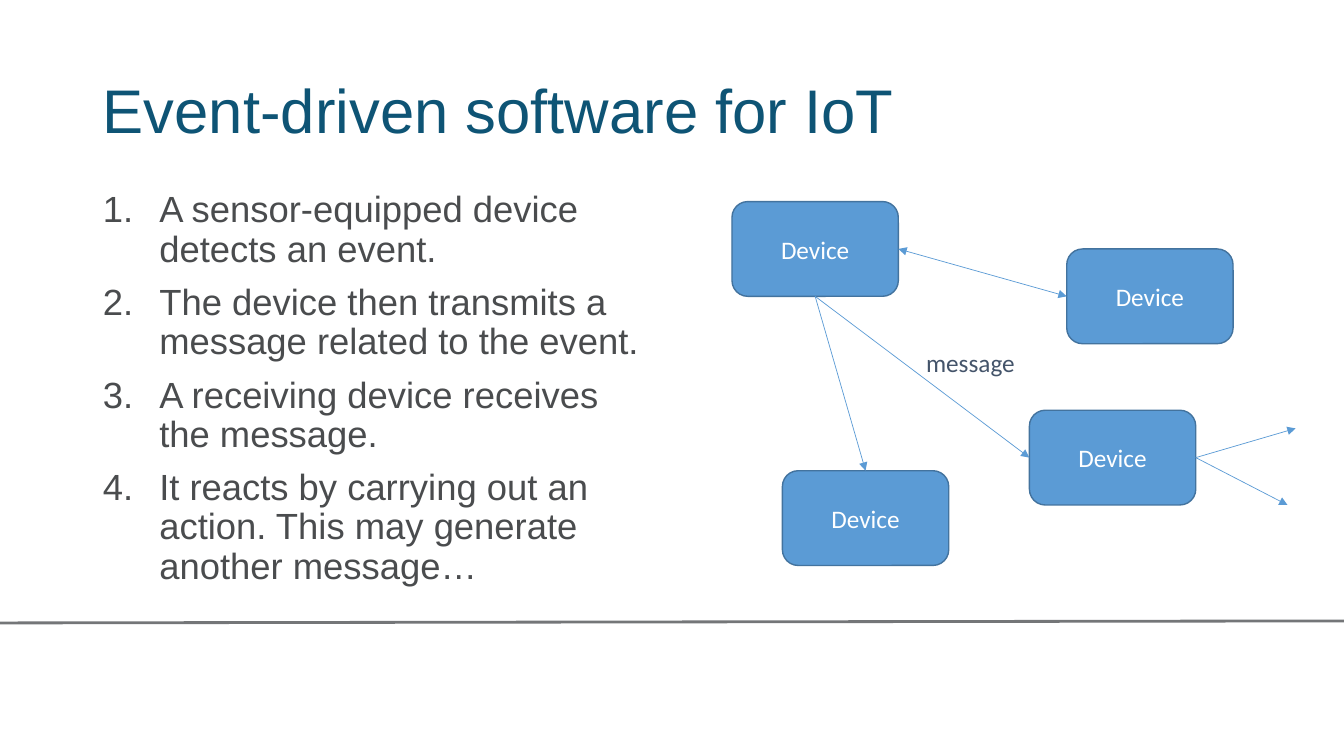
from lxml.etree import SubElement
from pptx import Presentation
from pptx.dml.color import RGBColor
from pptx.enum.shapes import MSO_CONNECTOR, MSO_SHAPE
from pptx.enum.text import MSO_ANCHOR, MSO_AUTO_SIZE, PP_ALIGN
from pptx.oxml.ns import qn
from pptx.util import Inches, Pt

TOP, LEFT, BOTTOM, RIGHT = range(4)


def paint(target, color):
    """Set a solid colour on a fill or a font colour."""
    if hasattr(target, "solid"):
        target.solid()
        target = target.fore_color
    target.rgb = RGBColor.from_string(color)


class Board:
    """Hold the style and the current slide."""

    blue, edge, rule = "5B9BD5", "43739E", "747678"
    head, body, note = "0E5475", "4A4C4E", "44546A"

    def __init__(self, deck):
        """Add a slide with a title and a body."""
        self.slide = deck.slides.add_slide(deck.slide_layouts[1])

    def place(self, shape, *box):
        """Move and size a shape."""
        shape.left, shape.top, shape.width, shape.height = map(Inches, box)

    def add_text(self, para, text, size, color, font, align):
        """Add one run of text to a paragraph."""
        para.alignment = align
        run = para.add_run()
        run.text = text
        run.font.size, run.font.name = Pt(size), font
        paint(run.font.color, color)

    def title(self, text, *box):
        """Fill the title placeholder."""
        shape = self.slide.shapes.title
        self.place(shape, *box)
        frame = shape.text_frame
        frame.auto_size = MSO_AUTO_SIZE.NONE
        frame.vertical_anchor = MSO_ANCHOR.MIDDLE
        para = frame.paragraphs[0]
        para.line_spacing = 0.9
        self.add_text(para, text, 44, self.head, "Arial", PP_ALIGN.LEFT)

    def steps(self, items, *box):
        """Fill the body placeholder with a numbered list."""
        shape = self.slide.placeholders[1]
        self.place(shape, *box)
        frame = shape.text_frame
        frame.auto_size = MSO_AUTO_SIZE.NONE
        frame.vertical_anchor = MSO_ANCHOR.TOP
        for i, item in enumerate(items):
            para = frame.add_paragraph() if i else frame.paragraphs[0]
            props = para._p.get_or_add_pPr()
            props.set("marL", str(Inches(0.56)))
            props.set("indent", str(-Inches(0.56)))
            SubElement(props, qn("a:buFont"), typeface="+mj-lt")
            SubElement(props, qn("a:buAutoNum"), type="arabicPeriod")
            para.line_spacing = 0.9
            para.space_before = Pt(10 if i else 0)
            self.add_text(para, item, 26, self.body, "Arial", PP_ALIGN.LEFT)

    def device(self, x, y):
        """Add a rounded device box."""
        shape = self.slide.shapes.add_shape(
            MSO_SHAPE.ROUNDED_RECTANGLE, Inches(x), Inches(y), Inches(1.65), Inches(0.94))
        shape.shadow.inherit = False
        paint(shape.fill, self.blue)
        paint(shape.line.fill, self.edge)
        shape.line.width = Pt(1)
        frame = shape.text_frame
        frame.vertical_anchor = MSO_ANCHOR.MIDDLE
        self.add_text(frame.paragraphs[0], "Device", 18, "FFFFFF", "Calibri", PP_ALIGN.CENTER)
        return shape

    def line(self, start, end, color, width):
        """Add a plain straight line between two points."""
        link = self.slide.shapes.add_connector(
            MSO_CONNECTOR.STRAIGHT, *map(Inches, (*start, *end)))
        paint(link.line.fill, color)
        link.line.width = Pt(width)
        SubElement(link._element.spPr, qn("a:effectLst"))
        return link

    def arrow(self, source, side, target=None, entry=None, end=(0, 0), both=False):
        """Add an arrow from a device to another one or to a point."""
        link = self.line((0, 0), end, self.blue, 0.5)
        link.begin_connect(source, side)
        if target is not None:
            link.end_connect(target, entry)
        line = link._element.spPr.get_or_add_ln()
        for tag in ("a:headEnd", "a:tailEnd") if both else ("a:tailEnd",):
            SubElement(line, qn(tag), type="triangle")

    def label(self, text, *box):
        """Add a centred text label."""
        shape = self.slide.shapes.add_textbox(*map(Inches, box))
        frame = shape.text_frame
        frame.word_wrap = True
        frame.auto_size = MSO_AUTO_SIZE.SHAPE_TO_FIT_TEXT
        self.add_text(frame.paragraphs[0], text, 18, self.note, "Calibri", PP_ALIGN.CENTER)


def main():
    """Build and save the slide."""
    deck = Presentation()
    deck.slide_width, deck.slide_height = Inches(13.33), Inches(7.5)
    board = Board(deck)
    board.line((0, 6.18), (13.33, 6.16), board.rule, 2)
    board.title("Event-driven software for IoT", 0.92, 0.4, 11.5, 1.45)
    board.steps([
        "A sensor-equipped device detects an event.",
        "The device then transmits a message related to the event.",
        "A receiving device receives the message.",
        "It reacts by carrying out an action. This may generate another message…",
    ], 0.92, 1.85, 5.67, 4.91)

    sensor = board.device(7.26, 2)
    relay = board.device(10.21, 4.07)
    lower = board.device(7.76, 4.67)
    upper = board.device(10.58, 2.47)
    board.arrow(sensor, RIGHT, upper, LEFT, both=True)
    board.arrow(sensor, BOTTOM, relay, LEFT)
    board.arrow(sensor, BOTTOM, lower, TOP)
    for end in ((12.77, 5.01), (12.85, 4.25)):
        board.arrow(relay, RIGHT, end=end)
    board.label("message", 9.04, 3.4, 1.17, 0.4)
    deck.save("out.pptx")


if __name__ == "__main__":
    main()
